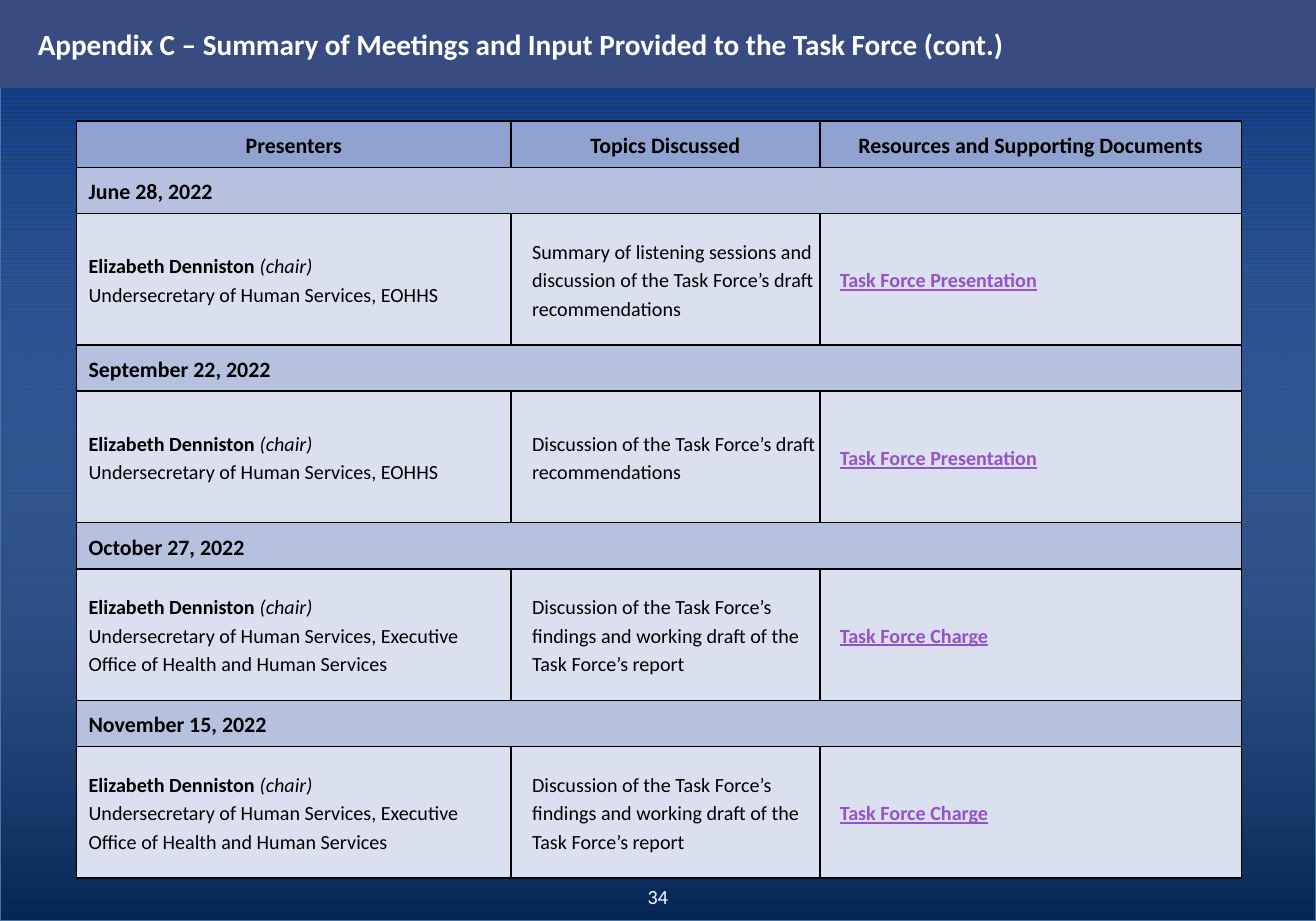
"""Build the appendix slide that lists task force meetings."""
from lxml import etree
from pptx import Presentation
from pptx import util as u
from pptx.dml.color import RGBColor
from pptx.enum import dml, shapes, text
from pptx.oxml.ns import qn

WHITE = RGBColor(0xFF, 0xFF, 0xFF)
BLACK = RGBColor(0x00, 0x00, 0x00)
STRIPE = RGBColor(0x00, 0x33, 0x99)
NAVY = RGBColor(0x07, 0x2C, 0x62)
DEEP_NAVY = RGBColor(0x06, 0x27, 0x56)
PALE_BLUE = RGBColor(0xB6, 0xD1, 0xFA)
FRAME = RGBColor(0x49, 0x74, 0x9B)
BANNER = RGBColor(0x38, 0x4C, 0x81)
HEADER = RGBColor(0x90, 0xA2, 0xCF)
DATE = RGBColor(0xB5, 0xC1, 0xDF)
BODY = RGBColor(0xDA, 0xE0, 0xEF)
LINK = RGBColor(0x94, 0x54, 0xC3)

WIDTH, HEIGHT = u.Cm(25.4), u.Cm(17.78)
COLUMNS = (8.38, 5.97, 8.13)
ROW, TALL_ROW = 0.89, 2.54
INDENTS = (0.15, 0.33, 0.3)

HEADINGS = ("Presenters", "Topics Discussed", "Resources and Supporting Documents")
SHORT_OFFICE = "Undersecretary of Human Services, EOHHS"
LONG_OFFICE = ("Undersecretary of Human Services, "
               "Executive Office of Health and Human Services")
REPORT = "Discussion of the Task Force’s findings and working draft of the Task Force’s report"
MEETINGS = (
    ("June 28, 2022", SHORT_OFFICE,
     "Summary of listening sessions and discussion of the Task Force’s draft recommendations",
     "Task Force Presentation"),
    ("September 22, 2022", SHORT_OFFICE,
     "Discussion of the Task Force’s draft recommendations",
     "Task Force Presentation"),
    ("October 27, 2022", LONG_OFFICE, REPORT, "Task Force Charge"),
    ("November 15, 2022", LONG_OFFICE, REPORT, "Task Force Charge"),
)


class Deck:
    """Holds the font and the current slide."""

    def __init__(self, prs, font="Calibri"):
        self.font = font
        self.s = prs.slides.add_slide(prs.slide_layouts[6])

    def background(self):
        """Draw the striped background and the fade over it."""
        fill = self.s.background.fill
        fill.patterned()
        fill.pattern = dml.MSO_PATTERN.LIGHT_HORIZONTAL
        fill.fore_color.rgb, fill.back_color.rgb = STRIPE, NAVY
        sp = self.box(0, 0, WIDTH, HEIGHT)
        sp.fill.gradient()
        sp.fill.gradient_angle = 90
        for stop, color in zip(sp.fill.gradient_stops, (DEEP_NAVY, PALE_BLUE)):
            stop.color.rgb = color
        clear = sp._element.spPr.findall(".//" + qn("a:srgbClr"))[-1]
        etree.SubElement(clear, qn("a:alpha"), val="0")
        sp.line.color.rgb = FRAME
        sp.line.width = u.Pt(1.5)

    def box(self, x, y, w, h):
        """Add a rectangle without a shadow."""
        sp = self.s.shapes.add_shape(shapes.MSO_SHAPE.RECTANGLE, x, y, w, h)
        sp.shadow.inherit = False
        return sp

    def banner(self, title):
        """Add the title band."""
        sp = self.box(0, 0, WIDTH, u.Cm(1.7))
        sp.fill.solid()
        sp.fill.fore_color.rgb = BANNER
        sp.line.fill.background()
        tf = sp.text_frame
        tf.vertical_anchor = text.MSO_ANCHOR.MIDDLE
        p = tf.paragraphs[0]
        p.text = title
        self.style(p, 16, WHITE, indent=0.48, bold=True)

    def page_number(self, number):
        """Add the centred page number."""
        sp = self.s.shapes.add_textbox(u.Cm(10.58), u.Cm(16.94), u.Cm(4.24), u.Cm(0.84))
        tf = sp.text_frame
        tf.word_wrap = True
        tf.text = number
        self.style(tf.paragraphs[0], 11, WHITE, centered=True)

    def style(self, p, size, color=BLACK, indent=0, centered=False, bold=False):
        """Format a paragraph and its runs."""
        p.alignment = text.PP_ALIGN.CENTER if centered else text.PP_ALIGN.LEFT
        pPr = p._p.get_or_add_pPr()
        pPr.set("marL", str(u.Cm(indent)))
        pPr.set("indent", "0")
        for r in p.runs:
            r.font.name, r.font.size, r.font.bold = self.font, u.Pt(size), bold
            r.font.color.rgb = color

    def table(self, x, y, heights):
        """Add a table with the given row heights."""
        frame = self.s.shapes.add_table(
            len(heights), len(COLUMNS), u.Cm(x), u.Cm(y),
            u.Cm(sum(COLUMNS)), u.Cm(sum(heights)))
        table = frame.table
        table.first_row = table.horz_banding = False
        for column, width in zip(table.columns, COLUMNS):
            column.width = u.Cm(width)
        for row, height in zip(table.rows, heights):
            row.height = u.Cm(height)
        return table

    def cell(self, cell, content, fill, size=11, **style):
        """Fill, outline and write one cell, and return its paragraphs."""
        tcPr = cell._tc.get_or_add_tcPr()
        for side in ("lnL", "lnR", "lnT", "lnB"):
            ln = etree.SubElement(tcPr, qn("a:" + side), w=str(u.Pt(1)))
            solid = etree.SubElement(ln, qn("a:solidFill"))
            etree.SubElement(solid, qn("a:srgbClr"), val=str(BLACK))
        cell.fill.solid()
        cell.fill.fore_color.rgb = fill
        cell.vertical_anchor = text.MSO_ANCHOR.MIDDLE
        cell.margin_left = cell.margin_right = u.Cm(0.08)
        cell.margin_top = cell.margin_bottom = u.Cm(0.03)
        cell.text_frame.text = content
        for p in cell.text_frame.paragraphs:
            p.line_spacing = 1.15
            self.style(p, size, **style)
        return cell.text_frame.paragraphs

    def meeting(self, table, row, date, office, topic, link):
        """Write a date row and the detail row below it."""
        for col, content in enumerate((date, "", "")):
            self.cell(table.cell(row, col), content, DATE, 12, indent=INDENTS[0], bold=True)
        table.cell(row, 0).merge(table.cell(row, 2))
        presenter, topics, resource = (table.cell(row + 1, col) for col in range(3))
        p = self.cell(presenter, "Elizabeth Denniston \n" + office, BODY, indent=INDENTS[0])[0]
        p.add_run().text = "(chair)"
        self.style(p, 11, indent=INDENTS[0])
        name, role = p.runs
        name.font.bold = role.font.italic = True
        self.cell(topics, topic, BODY, indent=INDENTS[1])
        p = self.cell(resource, link, BODY, color=LINK, indent=INDENTS[2], bold=True)[0]
        p.runs[0].font.underline = True


def main():
    """Build and save the slide."""
    prs = Presentation()
    prs.slide_width, prs.slide_height = WIDTH, HEIGHT
    deck = Deck(prs)
    deck.background()
    table = deck.table(1.48, 2.34, [ROW] + [ROW, TALL_ROW] * len(MEETINGS))
    for col, heading in enumerate(HEADINGS):
        deck.cell(table.cell(0, col), heading, HEADER, 12, centered=True, bold=True)
    for i, meeting in enumerate(MEETINGS):
        deck.meeting(table, 1 + 2 * i, *meeting)
    deck.banner("Appendix C – Summary of Meetings and Input Provided to the Task Force (cont.)")
    deck.page_number("34")
    prs.save("out.pptx")


if __name__ == "__main__":
    main()
